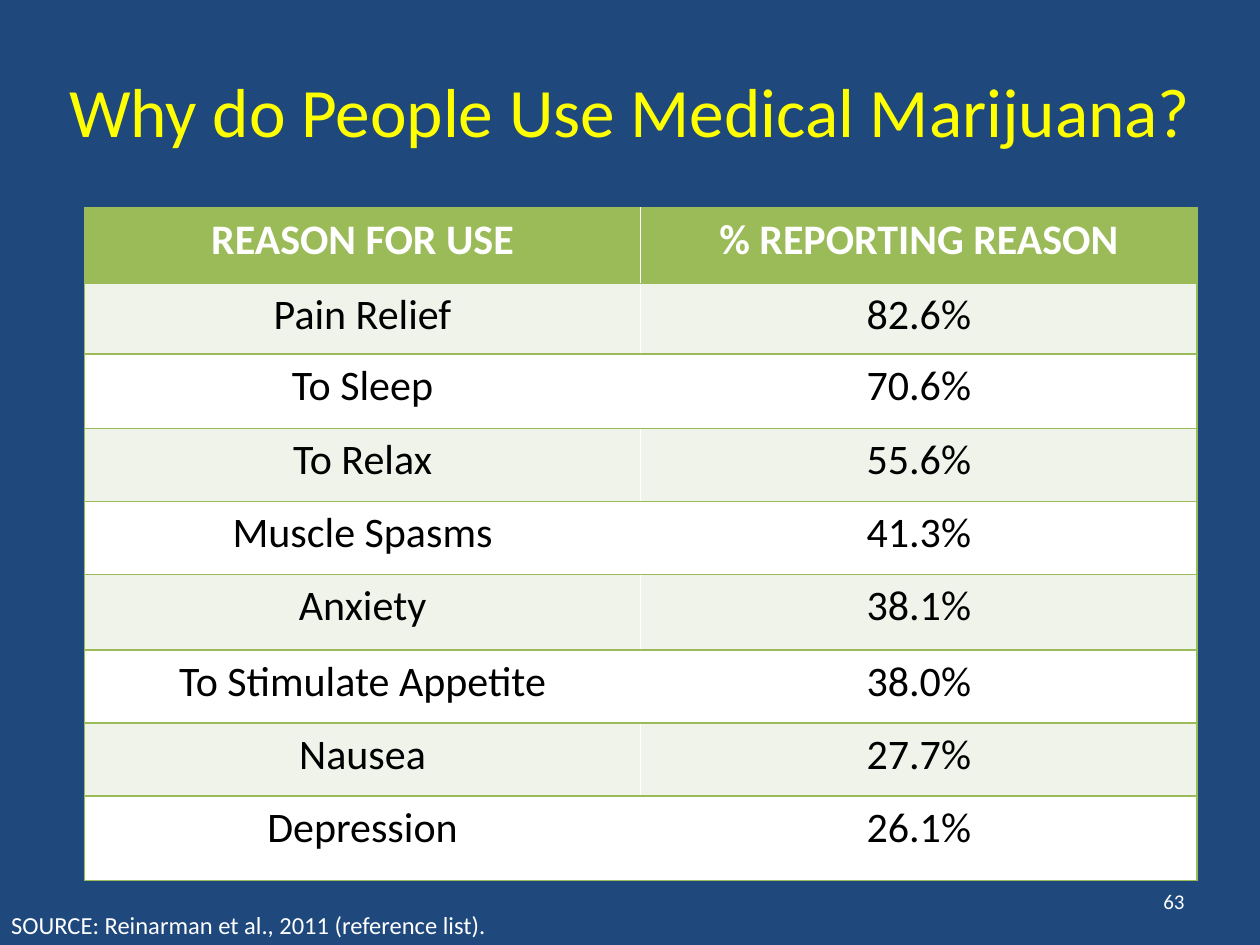
import pptx
import pptx.util
import pptx.dml.color
import pptx.enum.text
import lxml.etree
import pptx.oxml.ns

Inches = pptx.util.Inches
ALIGN = pptx.enum.text.PP_ALIGN
ANCHOR = pptx.enum.text.MSO_ANCHOR
GREEN, PALE, WHITE = "9BBB59", "EFF3EA", "FFFFFF"


def color(value):
    return pptx.dml.color.RGBColor.from_string(value)


def write(tf, text, size, hue, align, anchor, bold=False):
    tf.word_wrap = True
    tf.vertical_anchor = anchor
    p = tf.paragraphs[0]
    p.alignment = align
    r = p.add_run()
    r.text = text
    font = {"name": "Calibri", "size": pptx.util.Pt(size), "bold": bold}
    for key, value in font.items():
        setattr(r.font, key, value)
    r.font.color.rgb = color(hue)


prs = pptx.Presentation()
prs.slide_width, prs.slide_height = Inches(10), Inches(7.5)
W, H = prs.slide_width, prs.slide_height
s = prs.slides.add_slide(prs.slide_layouts[5])
s.background.fill.solid()
s.background.fill.fore_color.rgb = color("1F497D")

title = s.shapes.title
frame = {"left": 0, "top": H // 30, "width": W, "height": H // 6}
for key, value in frame.items():
    setattr(title, key, value)
title.text_frame.auto_size = pptx.enum.text.MSO_AUTO_SIZE.NONE
write(title.text_frame, "Why do People Use Medical Marijuana?", 39.6, "FFFF00",
      ALIGN.CENTER, ANCHOR.MIDDLE)

reasons = [
    ("REASON FOR USE", "% REPORTING REASON"),
    ("Pain Relief", "82.6%"),
    ("To Sleep", "70.6%"),
    ("To Relax", "55.6%"),
    ("Muscle Spasms", "41.3%"),
    ("Anxiety", "38.1%"),
    ("To Stimulate Appetite", "38.0%"),
    ("Nausea", "27.7%"),
    ("Depression", "26.1%"),
]
heights = [0.6, 0.56, 0.59, 0.58, 0.58, 0.6, 0.58, 0.58, 0.67]
table = s.shapes.add_table(len(reasons), 2, Inches(0.67), Inches(1.65),
                           Inches(8.83), Inches(sum(heights))).table
for row, height in zip(table.rows, heights):
    row.height = Inches(height)

for i, row in enumerate(reasons):
    for j, text in enumerate(row):
        cell = table.cell(i, j)
        header = i == 0
        write(cell.text_frame, text, 24, WHITE if header else "000000",
              ALIGN.CENTER, ANCHOR.TOP, bold=header)
        tcPr = cell._tc.get_or_add_tcPr()
        # Outer side first, then top and bottom: no rule between the columns
        for side in ("lnR" if j else "lnL", "lnT", "lnB"):
            ln = lxml.etree.SubElement(tcPr, pptx.oxml.ns.qn("a:" + side), w="12700")
            fill = lxml.etree.SubElement(ln, pptx.oxml.ns.qn("a:solidFill"))
            lxml.etree.SubElement(fill, pptx.oxml.ns.qn("a:srgbClr"), val=GREEN)
        cell.fill.solid()
        cell.fill.fore_color.rgb = color(GREEN if header else PALE if i % 2 else WHITE)

notes = [
    ("SOURCE: Reinarman et al., 2011 (reference list).", 14, ALIGN.LEFT, ANCHOR.TOP,
     (-0.01, 7.17, 5, 0.34)),
    ("63", 12, ALIGN.RIGHT, ANCHOR.MIDDLE, (7.17, 6.95, 2.33, 0.4)),
]
for text, size, align, anchor, box in notes:
    tf = s.shapes.add_textbox(*map(Inches, box)).text_frame
    write(tf, text, size, WHITE, align, anchor)

prs.save("out.pptx")
